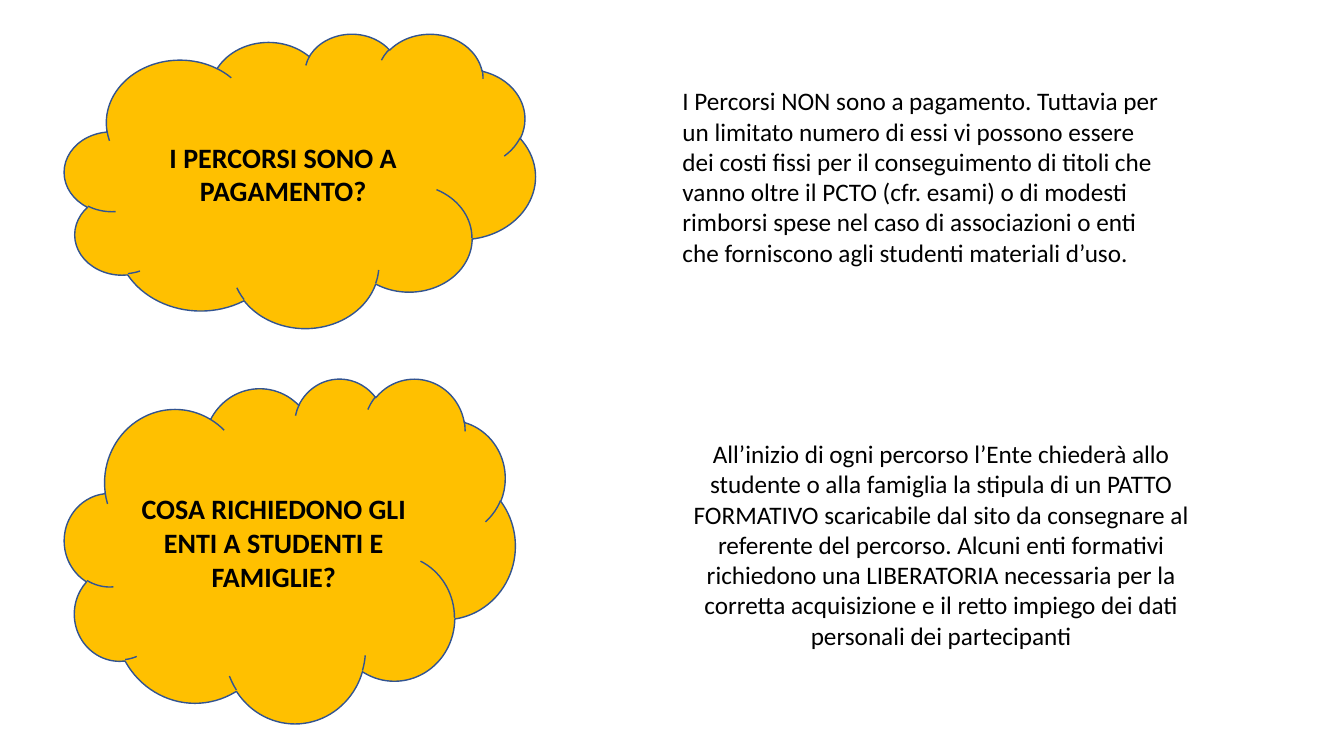
from dataclasses import dataclass

from pptx import Presentation
from pptx.dml.color import RGBColor
from pptx.enum.shapes import MSO_SHAPE
from pptx.enum.text import MSO_ANCHOR, MSO_AUTO_SIZE, PP_ALIGN
from pptx.util import Inches, Pt


@dataclass(frozen=True)
class Theme:
    font: str = "Calibri"
    cloud_fill: RGBColor = RGBColor(0xFF, 0xC0, 0x00)
    cloud_line: RGBColor = RGBColor(0x32, 0x54, 0x91)
    text: RGBColor = RGBColor(0x00, 0x00, 0x00)
    question_size: Pt = Pt(20)
    answer_size: Pt = Pt(18)
    line_width: Pt = Pt(1)


theme = Theme()


def write(frame, text, size, alignment, bold=False):
    frame.word_wrap = True
    frame.text = text
    para = frame.paragraphs[0]
    para.alignment = alignment
    font = para.runs[0].font
    font.name = theme.font
    font.size = size
    font.bold = bold
    font.color.rgb = theme.text


# Page
deck = Presentation()
deck.slide_width = Inches(13.33)
deck.slide_height = Inches(7.5)
page = deck.slides.add_slide(deck.slide_layouts[6])

cloud_left = 0.64
answer_left = 6.67

# Each entry: question, cloud (top, width, height),
# answer, answer box (top, width, height), answer alignment
entries = [
    (
        "I PERCORSI SONO A PAGAMENTO?",
        (0.33, 4.67, 2.92),
        "I Percorsi NON sono a pagamento. Tuttavia per un limitato numero di essi "
        "vi possono essere dei costi fissi per il conseguimento di titoli che vanno "
        "oltre il PCTO (cfr. esami) o di modesti rimborsi spese nel caso di "
        "associazioni o enti che forniscono agli studenti materiali d’uso.",
        (0.8, 4.98, 1.92),
        PP_ALIGN.LEFT,
    ),
    (
        "COSA RICHIEDONO GLI ENTI A STUDENTI E FAMIGLIE?",
        (3.75, 4.47, 3.42),
        "All’inizio di ogni percorso l’Ente chiederà allo studente o alla famiglia "
        "la stipula di un PATTO FORMATIVO scaricabile dal sito da consegnare al "
        "referente del percorso. Alcuni enti formativi richiedono una LIBERATORIA "
        "necessaria per la corretta acquisizione e il retto impiego dei dati "
        "personali dei partecipanti",
        (4.3, 5.33, 2.22),
        PP_ALIGN.CENTER,
    ),
]

for question, cloud_place, answer, answer_place, alignment in entries:
    # Question cloud
    top, width, height = map(Inches, cloud_place)
    cloud = page.shapes.add_shape(MSO_SHAPE.CLOUD, Inches(cloud_left), top, width, height)
    cloud.shadow.inherit = False
    cloud.fill.solid()
    cloud.fill.fore_color.rgb = theme.cloud_fill
    cloud.line.color.rgb = theme.cloud_line
    cloud.line.width = theme.line_width
    cloud.text_frame.vertical_anchor = MSO_ANCHOR.MIDDLE
    write(cloud.text_frame, question, theme.question_size, PP_ALIGN.CENTER, bold=True)

    # Answer text
    top, width, height = map(Inches, answer_place)
    box = page.shapes.add_textbox(Inches(answer_left), top, width, height)
    write(box.text_frame, answer, theme.answer_size, alignment)
    box.text_frame.auto_size = MSO_AUTO_SIZE.SHAPE_TO_FIT_TEXT

deck.save("out.pptx")
